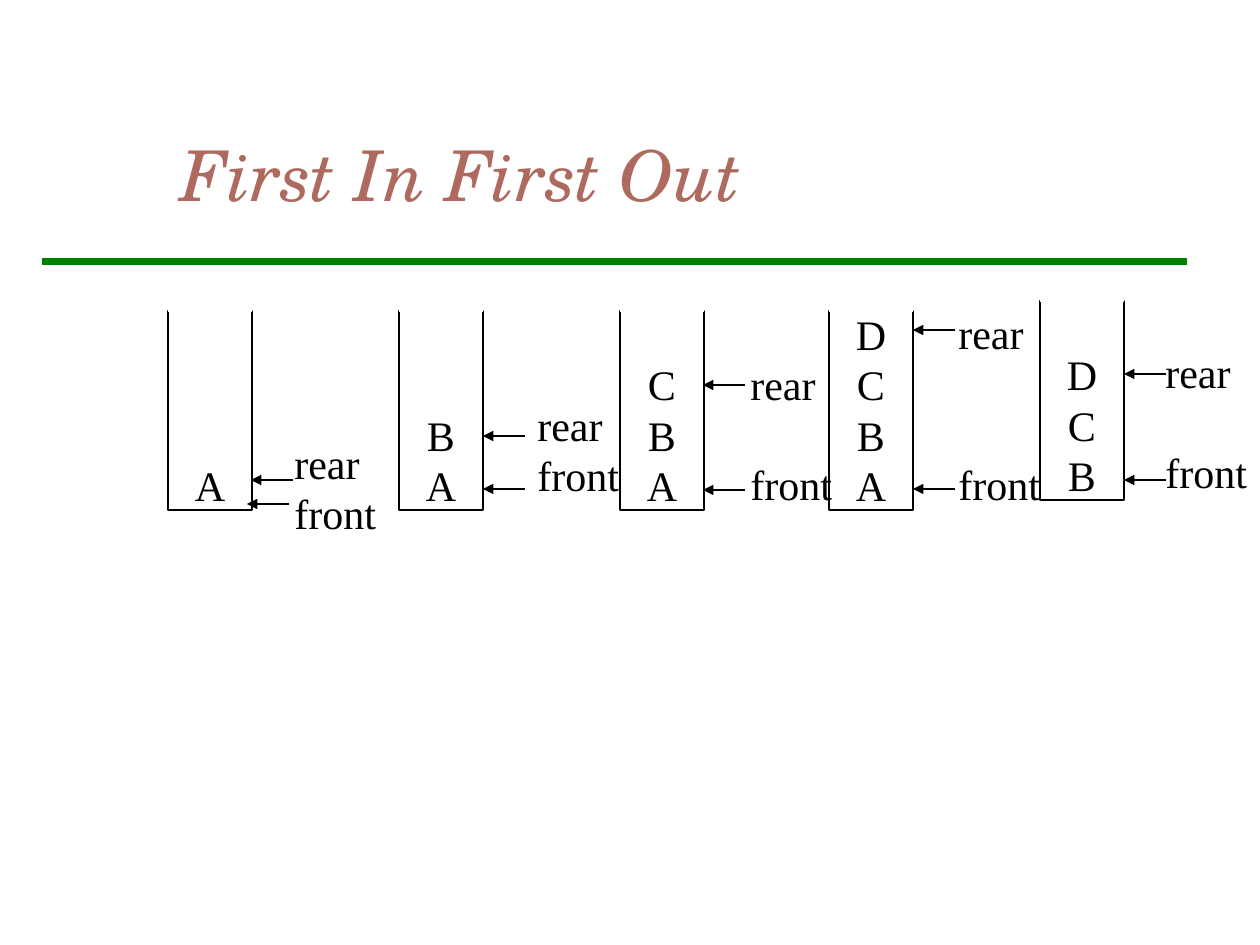
from dataclasses import dataclass

from lxml.etree import SubElement
from pptx import Presentation
from pptx.dml.color import RGBColor
from pptx.enum.shapes import MSO_CONNECTOR as Connector, MSO_SHAPE as Shape
from pptx.enum.text import MSO_ANCHOR as Anchor, PP_ALIGN as Align
from pptx.oxml.ns import qn
from pptx.util import Emu, Pt


@dataclass(frozen=True)
class Theme:
    """Colours, fonts and sizes of the slide."""
    ink: RGBColor = RGBColor.from_string("000000")
    paper: RGBColor = RGBColor.from_string("FFFFFF")
    rule: RGBColor = RGBColor.from_string("008000")
    heading: RGBColor = RGBColor.from_string("AF6A5F")
    heading_font: str = "TeX Gyre Schola"
    body_font: str = "Times New Roman"
    heading_size: float = 40
    body_size: float = 24
    row_height: float = 28.8
    thin: float = 0.75
    thick: float = 4


@dataclass(frozen=True)
class Queue:
    """One state of the queue with its pointers."""
    left: int
    top: int
    items: str
    arrows: tuple
    label: tuple
    gap_rows: int


THEME = Theme()
PX_PER_INCH = 126
QUEUE_WIDTH, QUEUE_HEIGHT = 84, 199
ARROW_LENGTH = 42
LABEL_WIDTH, LABEL_MARGIN, ROW_PX = 107, 13, 50
QUEUES = (
    Queue(168, 311, "A", ((251, 480), (247, 504)), (282, 431), 0),
    Queue(399, 311, "BA", ((483, 436), (483, 489)), (525, 393), 0),
    Queue(620, 311, "CBA", ((703, 385), (703, 490)), (738, 352), 1),
    Queue(829, 311, "DCBA", ((913, 330), (913, 489)), (946, 301), 2),
    Queue(1040, 301, "DCB", ((1124, 374), (1124, 480)), (1153, 340), 1),
)


def px(length):
    """Turn pixels into EMU."""
    return Emu(round(length * 914400 / PX_PER_INCH))


def add_rows(frame, rows, align):
    """Write one body paragraph for each row."""
    for index, row in enumerate(rows):
        paragraph = frame.add_paragraph() if index else frame.paragraphs[0]
        paragraph.alignment = align
        paragraph.line_spacing = Pt(THEME.row_height)
        run = paragraph.add_run()
        run.text = row
        run.font.name = THEME.body_font
        run.font.size = Pt(THEME.body_size)
        run.font.color.rgb = THEME.ink


def add_line(slide, start, end, color, width, arrow=False):
    """Draw a straight line, with an arrowhead at its end if wanted."""
    line = slide.shapes.add_connector(
        Connector.STRAIGHT, *map(px, (*start, *end)))
    line.line.color.rgb = color
    line.line.width = Pt(width)
    if arrow:
        SubElement(line.line._get_or_add_ln(), qn("a:tailEnd"), type="triangle")
    SubElement(line._element.spPr, qn("a:effectLst"))


def add_title(slide, text):
    """Fill and place the title placeholder."""
    title = slide.shapes.title
    title.left, title.top, title.width, title.height = map(
        px, (168, 95, 1071, 157))
    frame = title.text_frame
    frame.vertical_anchor = Anchor.MIDDLE
    frame.paragraphs[0].alignment = Align.LEFT
    run = frame.paragraphs[0].add_run()
    run.text = text
    run.font.name = THEME.heading_font
    run.font.size = Pt(THEME.heading_size)
    run.font.italic = True
    run.font.color.rgb = THEME.heading


def add_queue(slide, queue):
    """Draw the queue with its items stacked from the bottom."""
    box = slide.shapes.add_shape(Shape.RECTANGLE, *map(
        px, (queue.left, queue.top, QUEUE_WIDTH, QUEUE_HEIGHT)))
    box.shadow.inherit = False
    box.fill.solid()
    box.fill.fore_color.rgb = THEME.paper
    box.line.color.rgb = THEME.ink
    box.line.width = Pt(THEME.thin)
    frame = box.text_frame
    frame.word_wrap = False
    frame.vertical_anchor = Anchor.BOTTOM
    frame.margin_top = frame.margin_bottom = 0
    add_rows(frame, queue.items, Align.CENTER)


def add_arrows(slide, queue):
    """Draw the pointers to the rear and the front item."""
    for x, y in queue.arrows:
        add_line(slide, (x + ARROW_LENGTH, y), (x, y),
                 THEME.ink, THEME.thin, arrow=True)


def add_label(slide, queue):
    """Name the pointers, set apart by the rows between them."""
    height = LABEL_MARGIN + ROW_PX * (queue.gap_rows + 2)
    label = slide.shapes.add_textbox(
        *map(px, (*queue.label, LABEL_WIDTH, height)))
    frame = label.text_frame
    frame.word_wrap = False
    add_rows(frame, ("rear", "front"), Align.LEFT)
    frame.paragraphs[1].space_before = Pt(THEME.row_height * queue.gap_rows)


def add_opening(slide, queue):
    """Cover the top edge so that the queue looks open."""
    add_line(slide, (queue.left, queue.top),
             (queue.left + QUEUE_WIDTH, queue.top), THEME.paper, THEME.thin)


def main():
    """Build the slide and save it."""
    deck = Presentation()
    deck.slide_width, deck.slide_height = px(1260), px(945)
    slide = deck.slides.add_slide(deck.slide_layouts[5])
    add_title(slide, "First In First Out")
    add_line(slide, (42, 262), (1187, 262), THEME.rule, THEME.thick)
    for add_part in (add_queue, add_arrows, add_label, add_opening):
        for queue in QUEUES:
            add_part(slide, queue)
    deck.save("out.pptx")


if __name__ == "__main__":
    main()
